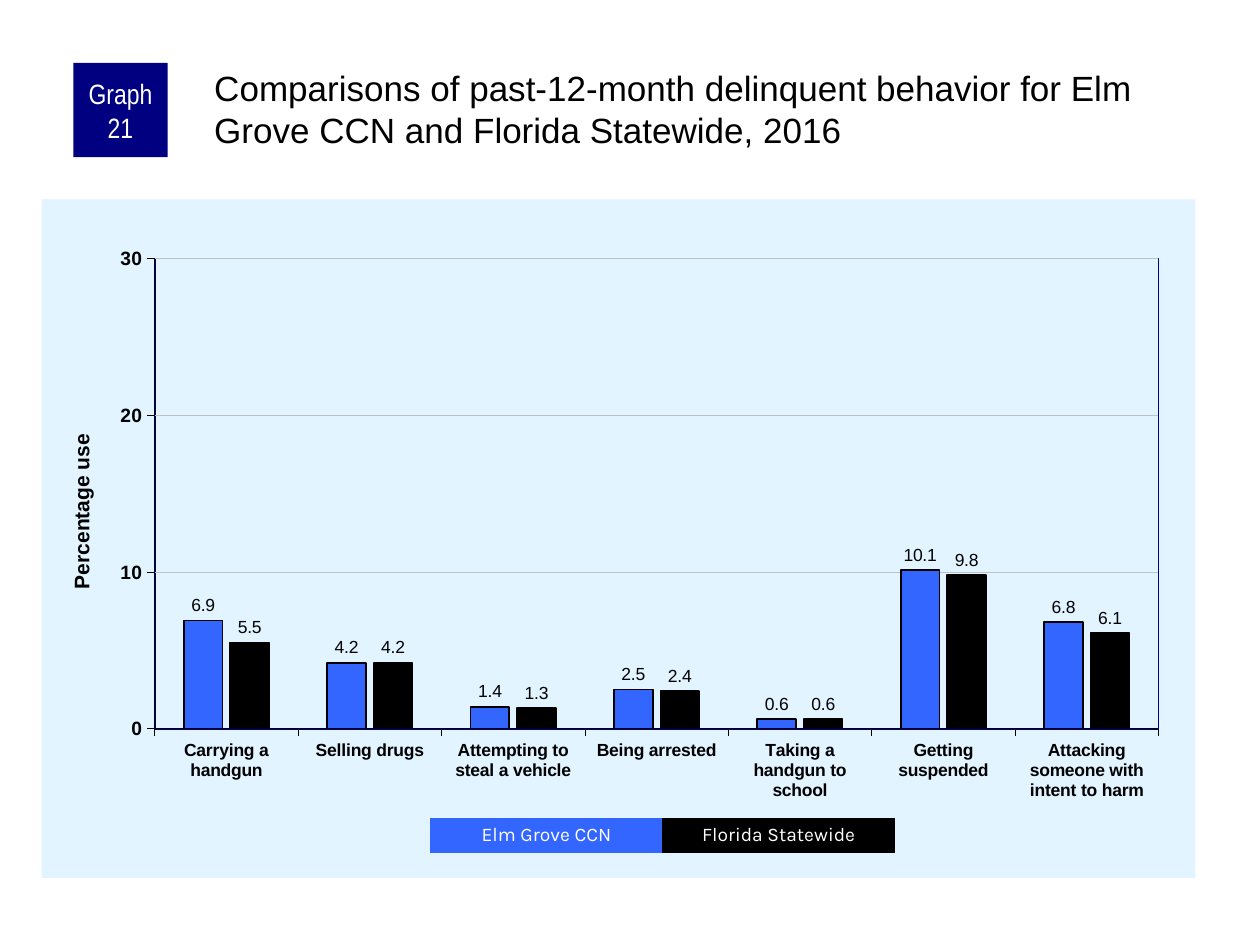
from lxml import etree
from pptx import Presentation
from pptx import util as u
from pptx.chart.data import CategoryChartData
from pptx.dml.color import RGBColor
from pptx.enum import chart as ch, shapes, text
from pptx.oxml import parse_xml
from pptx.oxml.ns import nsdecls, qn

NAVY = RGBColor(0x00, 0x00, 0x80)
BLUE = RGBColor(0x33, 0x66, 0xFF)
BLACK = RGBColor(0x00, 0x00, 0x00)
WHITE = RGBColor(0xFF, 0xFF, 0xFF)
GREY = RGBColor(0xC0, 0xC0, 0xC0)
PALE = RGBColor(0xE1, 0xF4, 0xFF)

TITLE = ("Comparisons of past-12-month delinquent behavior for "
         "Elm Grove CCN and Florida Statewide, 2016")
BADGE = "Graph 21"
AXIS_TITLE = "Percentage use"
CATEGORIES = ["Carrying a handgun", "Selling drugs", "Attempting to steal a vehicle",
              "Being arrested", "Taking a handgun to school", "Getting suspended",
              "Attacking someone with intent to harm"]
SERIES = [
    ("Elm Grove CCN", BLUE, (6.9, 4.2, 1.4, 2.5, 0.6, 10.1, 6.8)),
    ("Florida Statewide", BLACK, (5.5, 4.2, 1.3, 2.4, 0.6, 9.8, 6.1)),
]
CHART_BOX = (0.84, 4.02, 23.26, 13.68)
PLOT = (("layoutTarget", "inner"), ("xMode", "edge"), ("yMode", "edge"),
        ("x", 0.098), ("y", 0.087), ("w", 0.87), ("h", 0.693))
AXIS_TITLE_PLACE = (("xMode", "edge"), ("yMode", "edge"), ("x", 0.02), ("y", 0.34))
KEY_LEFT, KEY_TOP, KEY_WIDTH, KEY_HEIGHT = 8.68, 16.5, 4.68, 0.69


def box(values):
    return [u.Cm(v) for v in values]


def style_font(font, size, color, name="Arial", bold=False):
    font.size, font.name, font.bold = u.Pt(size), name, bold
    font.color.rgb = color


def set_margins(tf, *sizes):
    tf.margin_left, tf.margin_top, tf.margin_right, tf.margin_bottom = box(sizes)


def add_block(s, place, fill, words, size, font):
    sp = s.shapes.add_shape(shapes.MSO_SHAPE.RECTANGLE, *box(place))
    sp.shadow.inherit = False
    sp.fill.solid()
    sp.fill.fore_color.rgb = fill
    sp.line.fill.background()
    tf = sp.text_frame
    tf.word_wrap = True
    tf.vertical_anchor = text.MSO_ANCHOR.MIDDLE
    tf.text = words
    p = tf.paragraphs[0]
    p.alignment = text.PP_ALIGN.CENTER
    style_font(p.runs[0].font, size, WHITE, font)
    return sp


def set_layout(parent, after, settings):
    for old in parent.findall(qn("c:layout")):
        parent.remove(old)
    layout = etree.Element(qn("c:layout"))
    manual = etree.SubElement(layout, qn("c:manualLayout"))
    for tag, value in settings:
        etree.SubElement(manual, qn("c:" + tag)).set("val", str(value))
    if after is None:
        parent.insert(0, layout)
    else:
        after.addnext(layout)


def shape_props(fill, line):
    return parse_xml(f'<c:spPr {nsdecls("c", "a")}>{fill}{line}</c:spPr>')


def solid(color):
    return f'<a:solidFill><a:srgbClr val="{color}"/></a:solidFill>'


def style_axis(axis, size):
    style_font(axis.tick_labels.font, size, BLACK, bold=True)
    axis.major_tick_mark = ch.XL_TICK_MARK.OUTSIDE
    axis.minor_tick_mark = ch.XL_TICK_MARK.NONE
    axis.format.line.color.rgb = BLACK
    axis.format.line.width = u.Pt(0.25)


def add_chart(s):
    data = CategoryChartData(number_format="0.0")
    data.categories = CATEGORIES
    for name, _, values in SERIES:
        data.add_series(name, values)
    chart = s.shapes.add_chart(ch.XL_CHART_TYPE.COLUMN_CLUSTERED,
                               *box(CHART_BOX), data).chart
    chart.has_legend = chart.has_title = False
    style_font(chart.font, 11.5, BLACK)

    plot = chart.plots[0]
    plot.gap_width, plot.overlap, plot.vary_by_categories = 150, -20, False
    for series, (_, color, _) in zip(plot.series, SERIES):
        series.format.fill.solid()
        series.format.fill.fore_color.rgb = color
        series.format.line.color.rgb = BLACK
        series.format.line.width = u.Pt(1)
        labels = series.data_labels
        labels.show_value = True
        labels.number_format, labels.number_format_is_linked = "0.0", False
        labels.position = ch.XL_LABEL_POSITION.OUTSIDE_END
        style_font(labels.font, 10, BLACK)

    style_axis(chart.category_axis, 10)
    axis = chart.value_axis
    style_axis(axis, 11)
    axis.minimum_scale, axis.maximum_scale, axis.major_unit = 0, 30, 10
    axis.tick_labels.number_format = "0"
    axis.tick_labels.number_format_is_linked = False
    axis.major_gridlines.format.line.color.rgb = GREY
    axis.major_gridlines.format.line.width = u.Pt(0.25)
    tf = axis.axis_title.text_frame
    tf.text = AXIS_TITLE
    style_font(tf.paragraphs[0].runs[0].font, 12, BLACK, bold=True)
    title = axis.axis_title._element
    set_layout(title, title.find(qn("c:tx")), AXIS_TITLE_PLACE)

    space = chart._chartSpace
    area = space.chart.plotArea
    set_layout(area, None, PLOT)
    area.append(shape_props("<a:noFill/>", f'<a:ln w="12700">{solid(NAVY)}</a:ln>'))
    space.chart.addnext(shape_props(solid(PALE), "<a:ln><a:noFill/></a:ln>"))


def main():
    prs = Presentation()
    prs.slide_width, prs.slide_height = u.Cm(25.4), u.Cm(19.05)
    s = prs.slides.add_slide(prs.slide_layouts[6])
    add_chart(s)

    badge = add_block(s, (1.48, 1.27, 1.9, 1.9), NAVY, BADGE, 16, "Arial Narrow")
    set_margins(badge.text_frame, 0.13, 0, 0.13, 0)

    tf = s.shapes.add_textbox(*box((4.24, 1.27, 20.12, 2.11))).text_frame
    tf.word_wrap = True
    set_margins(tf, 0.08, 0.08, 0, 0)
    tf.text = TITLE
    style_font(tf.paragraphs[0].runs[0].font, 20, BLACK)

    for i, (name, color, _) in enumerate(SERIES):
        place = (KEY_LEFT + i * KEY_WIDTH, KEY_TOP, KEY_WIDTH, KEY_HEIGHT)
        key = add_block(s, place, color, name, 11, "Karla")
        key.line.color.rgb = color
        key.line.width = u.Pt(0.75)
        key.text_frame.paragraphs[0].line_spacing = 0.9

    prs.save("out.pptx")


if __name__ == "__main__":
    main()
